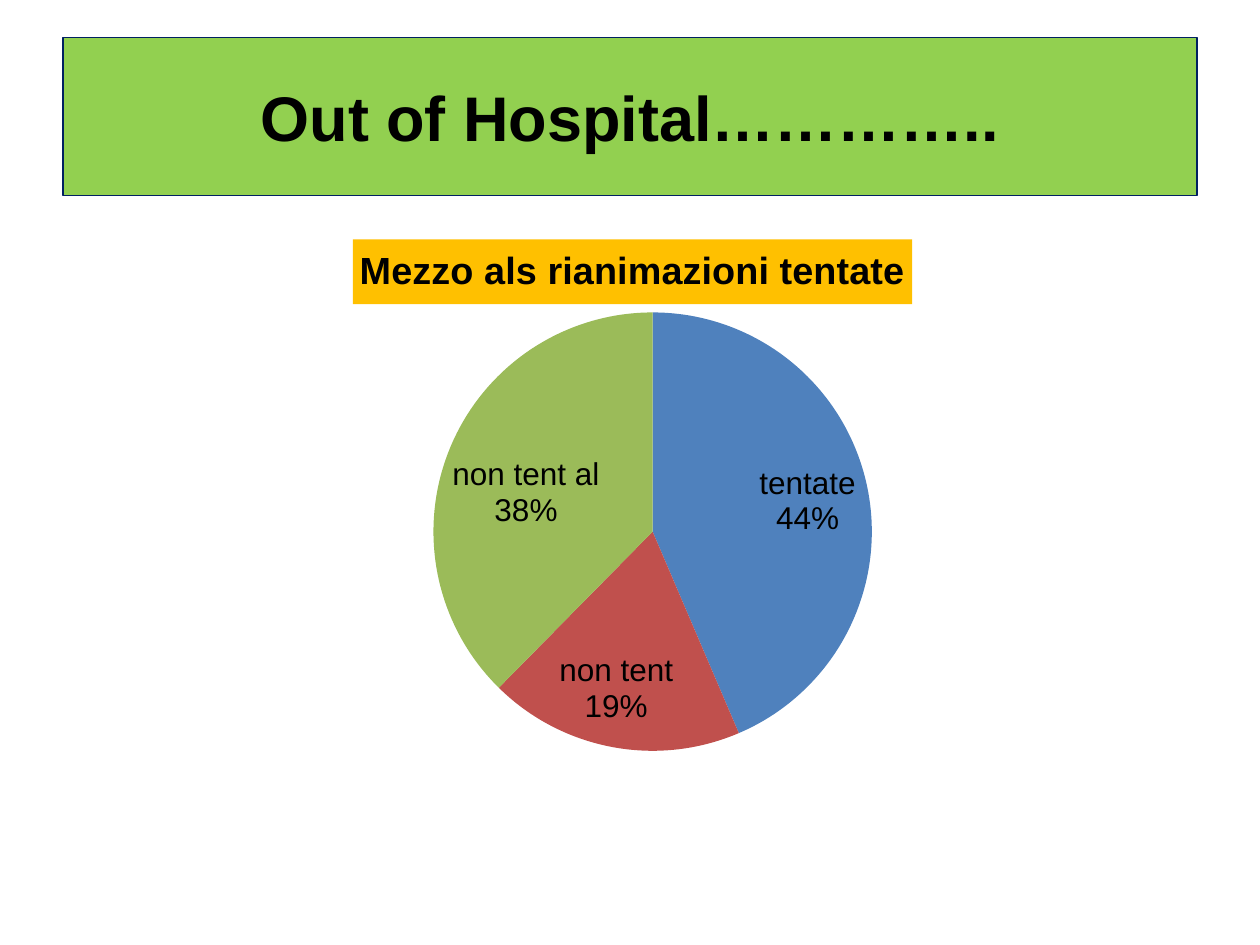
from dataclasses import dataclass

from pptx import Presentation
from pptx.chart.data import CategoryChartData
from pptx.dml.color import RGBColor
from pptx.enum.chart import XL_CHART_TYPE, XL_LABEL_POSITION
from pptx.enum.shapes import MSO_SHAPE
from pptx.enum.text import MSO_ANCHOR, PP_ALIGN
from pptx.oxml import parse_xml
from pptx.oxml.ns import nsdecls
from pptx.util import Emu, Pt

PX = 9144  # 100 px to the inch
FONT = "Arial"
BLACK = RGBColor(0x00, 0x00, 0x00)
NAVY = RGBColor(0x00, 0x20, 0x60)
LIME = RGBColor(0x92, 0xD0, 0x50)
AMBER = RGBColor(0xFF, 0xC0, 0x00)
BLUE = RGBColor(0x4F, 0x81, 0xBD)
RED = RGBColor(0xC0, 0x50, 0x4D)
GREEN = RGBColor(0x9B, 0xBB, 0x59)


@dataclass(frozen=True)
class Box:
    left: int
    top: int
    width: int
    height: int

    def emu(self) -> list[Emu]:
        return [Emu(side * PX) for side in (self.left, self.top, self.width, self.height)]


@dataclass(frozen=True)
class Slice:
    name: str
    value: int
    color: RGBColor


BANNER = Box(50, 30, 900, 125)
CHART = Box(50, 175, 900, 495)
CHART_TITLE = Box(280, 190, 440, 44)
PIE = Box(344, 248, 348, 348)
SLICES = [
    Slice("tentate", 44, BLUE),
    Slice("non tent", 19, RED),
    Slice("non tent al", 38, GREEN),
]


def format_font(font, *, size: float, bold: bool = False, color: RGBColor = BLACK) -> None:
    font.name = FONT
    font.size = Pt(size)
    font.bold = bold
    font.color.rgb = color


def write_text(text_frame, text: str, *, align=PP_ALIGN.CENTER, **font_format) -> None:
    paragraph = text_frame.paragraphs[0]
    paragraph.alignment = align
    run = paragraph.add_run()
    run.text = text
    format_font(run.font, **font_format)


def place(element, index: int, part: Box, chart_box: Box, target: str = "") -> None:
    """Give a chart part a manual layout, in fractions of the chart."""
    for old in element.xpath("c:layout"):
        element.remove(old)
    fractions = {
        "x": (part.left - chart_box.left) / chart_box.width,
        "y": (part.top - chart_box.top) / chart_box.height,
        "w": part.width / chart_box.width,
        "h": part.height / chart_box.height,
    }
    modes = '<c:xMode val="edge"/><c:yMode val="edge"/>'
    sides = "".join(f'<c:{side} val="{value:.4f}"/>' for side, value in fractions.items())
    element.insert(index, parse_xml(
        f'<c:layout {nsdecls("c")}><c:manualLayout>{target}{modes}{sides}'
        "</c:manualLayout></c:layout>"))


def add_banner(slide, box: Box, text: str) -> None:
    shape = slide.shapes.add_shape(MSO_SHAPE.RECTANGLE, *box.emu())
    shape.shadow.inherit = False
    shape.fill.solid()
    shape.fill.fore_color.rgb = LIME
    shape.line.color.rgb = NAVY
    shape.line.width = Pt(0.75)
    shape.text_frame.word_wrap = True
    shape.text_frame.vertical_anchor = MSO_ANCHOR.MIDDLE
    write_text(shape.text_frame, text, size=36, bold=True)


def add_pie(slide, box: Box, title: str, slices: list[Slice]) -> None:
    data = CategoryChartData()
    data.categories = [part.name for part in slices]
    data.add_series("Series 1", [part.value for part in slices])
    chart = slide.shapes.add_chart(XL_CHART_TYPE.PIE, *box.emu(), data).chart
    format_font(chart.font, size=18)
    chart.has_legend = False

    # Title on an amber strip; the small paragraph font keeps its padding tight
    chart.has_title = True
    title_frame = chart.chart_title.text_frame
    title_frame.paragraphs[0].font.size = Pt(10)
    write_text(title_frame, title, size=21.6, bold=True)
    chart.chart_title.format.fill.solid()
    chart.chart_title.format.fill.fore_color.rgb = AMBER
    place(chart.chart_title.element, 1, CHART_TITLE, box)

    # Slices
    plot = chart.plots[0]
    plot.vary_by_categories = True
    for index, part in enumerate(slices):
        point = plot.series[0].points[index]
        point.format.fill.solid()
        point.format.fill.fore_color.rgb = part.color
        point.format.line.fill.background()
    place(chart.element.xpath("c:chart/c:plotArea")[0], 0, PIE, box,
          '<c:layoutTarget val="inner"/>')

    # Labels: name above percentage
    plot.has_data_labels = True
    labels = plot.data_labels
    labels.show_category_name = True
    labels.show_percentage = True
    labels.show_value = False
    labels.show_legend_key = False
    labels.number_format = "0%"
    labels.number_format_is_linked = False
    labels.position = XL_LABEL_POSITION.BEST_FIT
    format_font(labels.font, size=18)
    separator = parse_xml(f'<c:separator {nsdecls("c")}>\n</c:separator>')
    flags = chart.element.xpath(".//c:dLbls/c:showPercent | .//c:dLbls/c:showBubbleSize")
    flags[-1].addnext(separator)


def main() -> None:
    presentation = Presentation()
    presentation.slide_width = Emu(1000 * PX)
    presentation.slide_height = Emu(750 * PX)
    slide = presentation.slides.add_slide(presentation.slide_layouts[6])
    add_banner(slide, BANNER, "Out of Hospital…………..")
    add_pie(slide, CHART, "Mezzo als rianimazioni tentate", SLICES)
    presentation.save("out.pptx")


if __name__ == "__main__":
    main()
